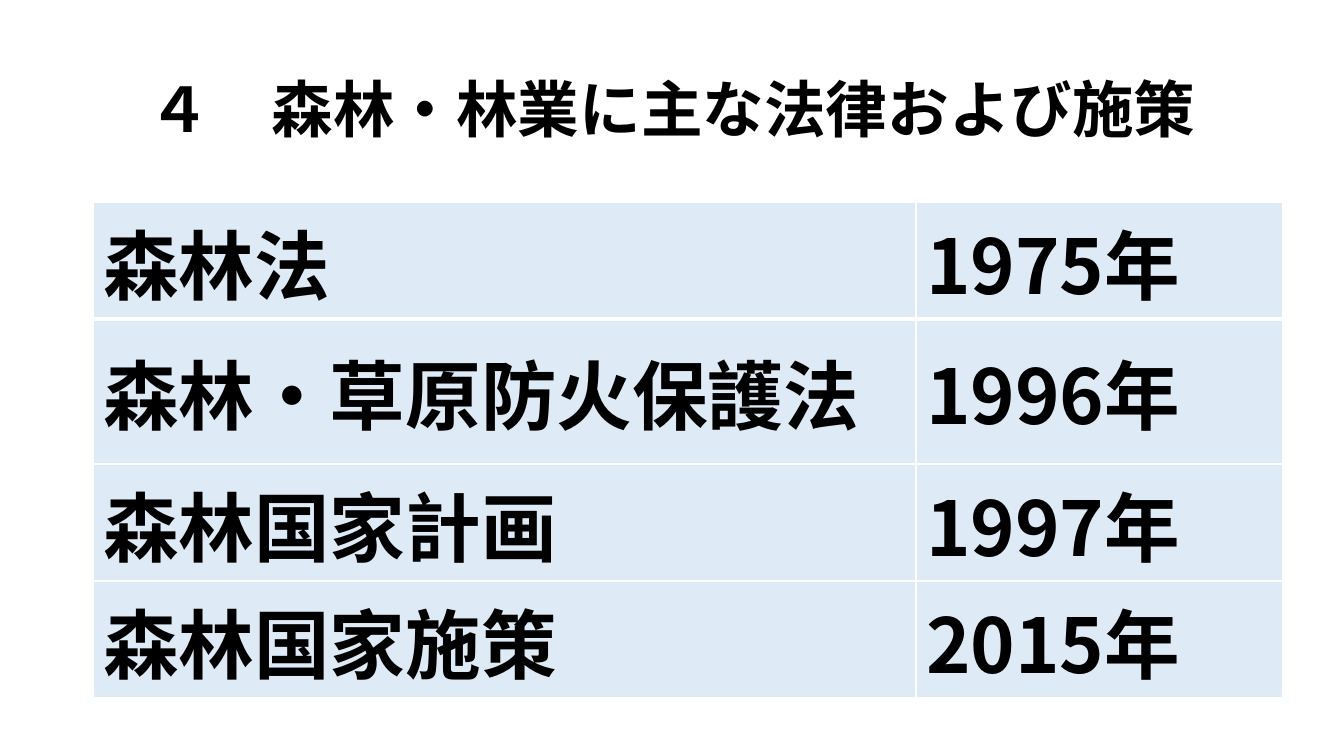
from typing import NamedTuple

from lxml.etree import SubElement
from pptx import Presentation
from pptx.dml.color import RGBColor
from pptx.enum.text import MSO_ANCHOR, PP_ALIGN
from pptx.oxml.ns import qn
from pptx.slide import Slide
from pptx.table import _Cell
from pptx.text.text import _Paragraph
from pptx.util import Emu, Pt

PX_PER_INCH = 100.8
BLACK = RGBColor(0x00, 0x00, 0x00)
WHITE = RGBColor(0xFF, 0xFF, 0xFF)
PALE_BLUE = RGBColor(0xDE, 0xEB, 0xF7)
FONT_NAME = "Noto Sans CJK JP"
TITLE = "４　森林・林業に主な法律および施策"
COLUMN_WIDTHS = (823, 367)


class Law(NamedTuple):
    name: str
    year: str
    row_height: int


LAWS = (
    Law("森林法", "1975年", 117),
    Law("森林・草原防火保護法", "1996年", 145),
    Law("森林国家計画", "1997年", 117),
    Law("森林国家施策", "2015年", 117),
)


def px(length: int) -> Emu:
    return Emu(round(length * 914400 / PX_PER_INCH))


def write_bold(paragraph: _Paragraph, text: str, size: int) -> None:
    """Fill a paragraph, setting the font for Latin and East Asian text."""
    paragraph.text = text
    font = paragraph.font
    font.name = FONT_NAME
    font.size = Pt(size)
    font.bold = True
    font.color.rgb = BLACK
    properties = paragraph._p.pPr.find(qn("a:defRPr"))
    SubElement(properties, qn("a:ea"), typeface=FONT_NAME)


def set_borders(cell: _Cell, widths: dict[str, int]) -> None:
    """Draw white borders; they must precede the fill in the cell XML."""
    properties = cell._tc.get_or_add_tcPr()
    for side, width in widths.items():
        line = SubElement(properties, qn(f"a:{side}"), w=str(Pt(width)))
        fill = SubElement(line, qn("a:solidFill"))
        SubElement(fill, qn("a:srgbClr"), val=str(WHITE))


def add_title(slide: Slide) -> None:
    frame = slide.shapes.add_textbox(px(93), px(40), px(1159), px(146)).text_frame
    frame.word_wrap = True
    frame.vertical_anchor = MSO_ANCHOR.MIDDLE
    paragraph = frame.paragraphs[0]
    paragraph.alignment = PP_ALIGN.CENTER
    paragraph.line_spacing = 0.9
    write_bold(paragraph, TITLE, 44)


def add_law_table(slide: Slide) -> None:
    height = sum(law.row_height for law in LAWS)
    table = slide.shapes.add_table(
        len(LAWS), len(COLUMN_WIDTHS),
        px(93), px(202), px(sum(COLUMN_WIDTHS)), px(height),
    ).table
    for column, width in zip(table.columns, COLUMN_WIDTHS):
        column.width = px(width)
    for index, law in enumerate(LAWS):
        row = table.rows[index]
        row.height = px(law.row_height)
        top = 3 if index == 1 else 1
        bottom = 3 if index == 0 else 1
        for cell, text in zip(row.cells, (law.name, law.year)):
            cell.vertical_anchor = MSO_ANCHOR.MIDDLE
            set_borders(cell, {"lnL": 1, "lnR": 1, "lnT": top, "lnB": bottom})
            cell.fill.solid()
            cell.fill.fore_color.rgb = PALE_BLUE
            write_bold(cell.text_frame.paragraphs[0], text, 54)


def main() -> None:
    presentation = Presentation()
    presentation.slide_width = px(1344)
    presentation.slide_height = px(756)
    slide = presentation.slides.add_slide(presentation.slide_layouts[6])
    add_title(slide)
    add_law_table(slide)
    presentation.save("out.pptx")


if __name__ == "__main__":
    main()
